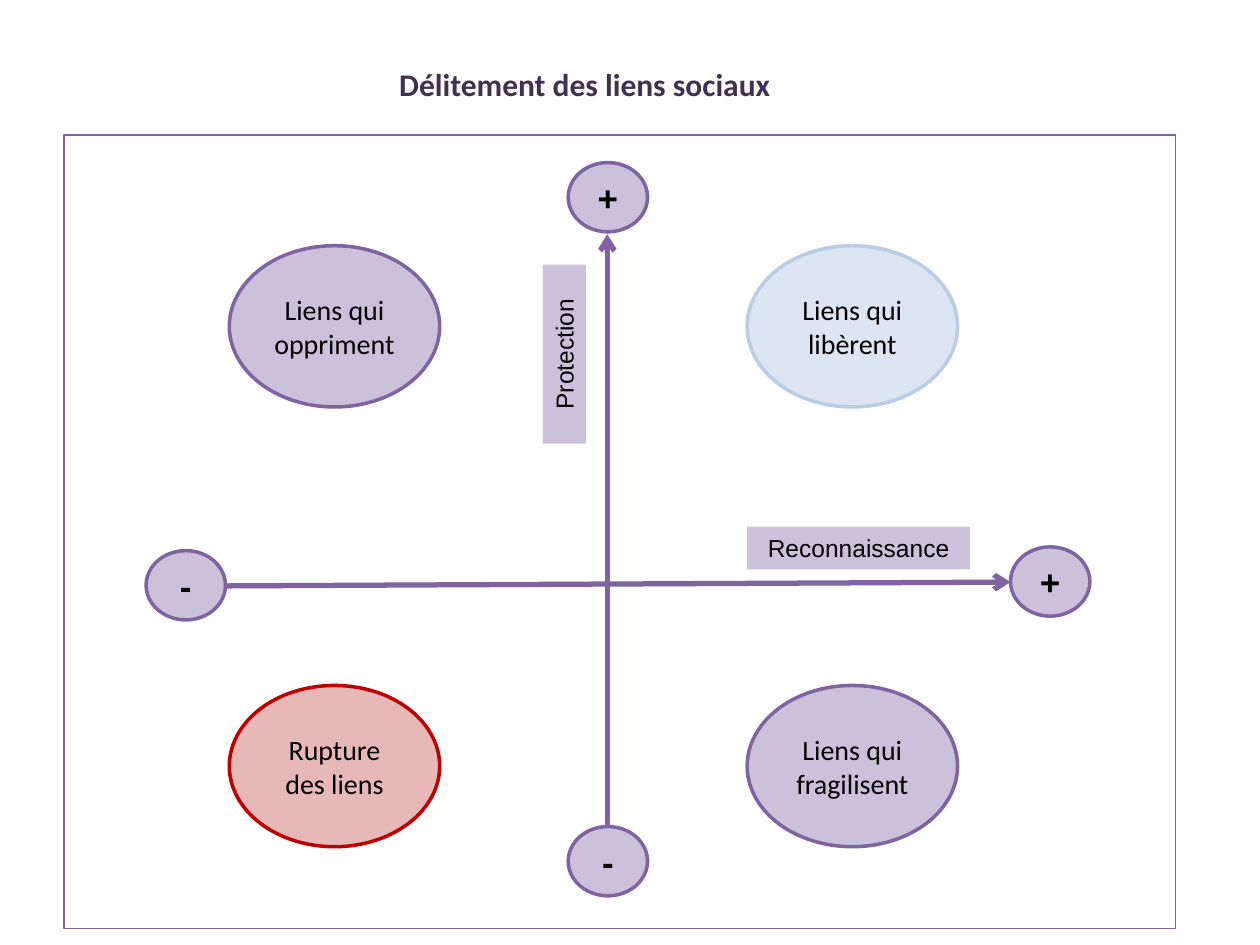
from lxml.etree import SubElement
from pptx import Presentation
from pptx.dml.color import RGBColor
from pptx.enum.shapes import MSO_CONNECTOR as Link, MSO_SHAPE as Kind
from pptx.enum.text import MSO_ANCHOR as Anchor, MSO_AUTO_SIZE as Fit, PP_ALIGN as Align
from pptx.oxml.ns import qn
from pptx.util import Emu, Pt

SCALE = 9144  # EMU per px, 100 px to the inch
PURPLE, LILAC, BLACK = "8064A2", "CCC1DA", "000000"


def px(n):
    return Emu(n * SCALE)


def color(fmt, code):
    fmt.rgb = RGBColor.from_string(code)


def write(frame, text, font, size, code=BLACK, bold=False, align=Align.CENTER):
    para = frame.paragraphs[0]
    para.alignment = align
    run = para.add_run()
    run.text = text
    run.font.name, run.font.size, run.font.bold = font, Pt(size), bold
    color(run.font.color, code)


def shape(slide, kind, box, fill=None, line=None, width=2):
    item = slide.shapes.add_shape(kind, *map(px, box))
    item.shadow.inherit = False
    if fill:
        item.fill.solid()
        color(item.fill.fore_color, fill)
    else:
        item.fill.background()
    if line:
        color(item.line.color, line)
        item.line.width = Pt(width)
    else:
        item.line.fill.background()
    frame = item.text_frame
    frame.word_wrap = True
    frame.vertical_anchor = Anchor.MIDDLE
    return item


def arrow(slide, start, end):
    item = slide.shapes.add_connector(Link.STRAIGHT, *map(px, start + end))
    color(item.line.color, PURPLE)
    item.line.width = Pt(3)
    SubElement(item.line._get_or_add_ln(), qn("a:tailEnd"), type="arrow")
    SubElement(item._element.spPr, qn("a:effectLst"))


def axes(slide, left, top):
    # Arrows
    for x1, y1, x2, y2 in ((128, 358, 751, 355), (431, 549, 431, 79)):
        arrow(slide, (left + x1, top + y1), (left + x2, top + y2))
    # Axis names
    for text, x, y, wide, turn in (("Protection", 326, 157, 142, 270),
                                   ("Reconnaissance", 542, 311, 177, 0)):
        tag = shape(slide, Kind.RECTANGLE, (left + x, top + y, wide, 34), LILAC)
        tag.rotation = turn
        tag.text_frame.vertical_anchor = Anchor.TOP
        tag.text_frame.auto_size = Fit.SHAPE_TO_FIT_TEXT
        write(tag.text_frame, text, "Arial", 14)
    # Signs at the four ends
    for sign, x, y in (("+", 751, 327), ("-", 65, 330),
                       ("-", 400, 549), ("+", 400, 22)):
        end = shape(slide, Kind.OVAL, (left + x, top + y, 63, 55), LILAC, PURPLE)
        write(end.text_frame, sign, "Arial", 20, bold=True)


def bonds(slide, left, top):
    cols, rows = (131, 542), (88, 437)
    for text, col, row, fill, line in (
            ("Liens qui fragilisent", 1, 1, LILAC, PURPLE),
            ("Liens qui libèrent", 1, 0, "DCE6F2", "B9CDE5"),
            ("Liens qui oppriment", 0, 0, LILAC, PURPLE),
            ("Rupture des liens", 0, 1, "E6B9B8", "C00000")):
        box = (left + cols[col], top + rows[row], 167, 128)
        write(shape(slide, Kind.OVAL, box, fill, line).text_frame, text, "Calibri", 16)


def title(slide, box):
    frame = slide.shapes.add_textbox(*map(px, box)).text_frame
    frame.word_wrap = False
    frame.auto_size = Fit.SHAPE_TO_FIT_TEXT
    write(frame, "Délitement des liens sociaux", "Calibri", 18, "403152", True, Align.LEFT)


def chart(slide, box):
    left, top = box[:2]
    axes(slide, left, top)
    bonds(slide, left, top)
    # Outer border
    shape(slide, Kind.RECTANGLE, box, line=PURPLE, width=1)


def main():
    deck = Presentation()
    deck.slide_width, deck.slide_height = px(1000), px(750)
    slide = deck.slides.add_slide(deck.slide_layouts[6])
    chart(slide, (51, 107, 882, 630))
    title(slide, (307, 47, 317, 40))
    deck.save("out.pptx")


if __name__ == "__main__":
    main()
